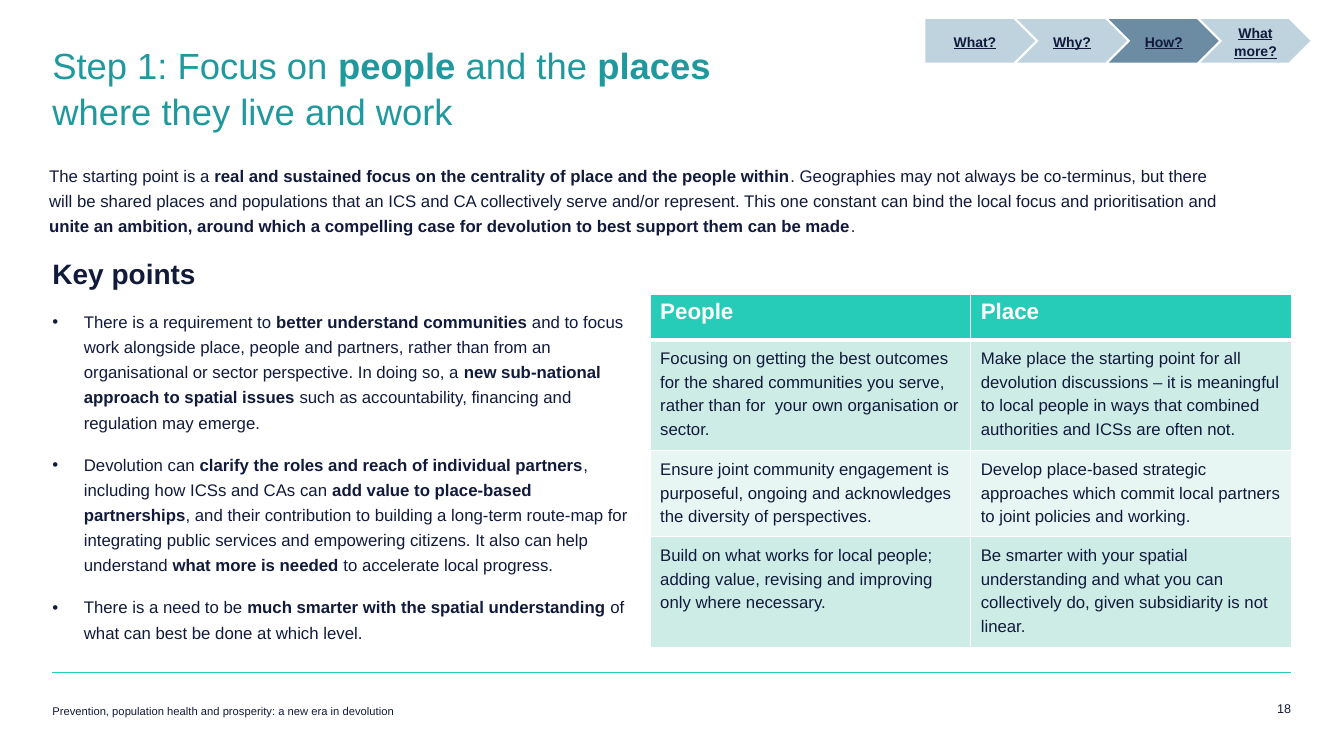
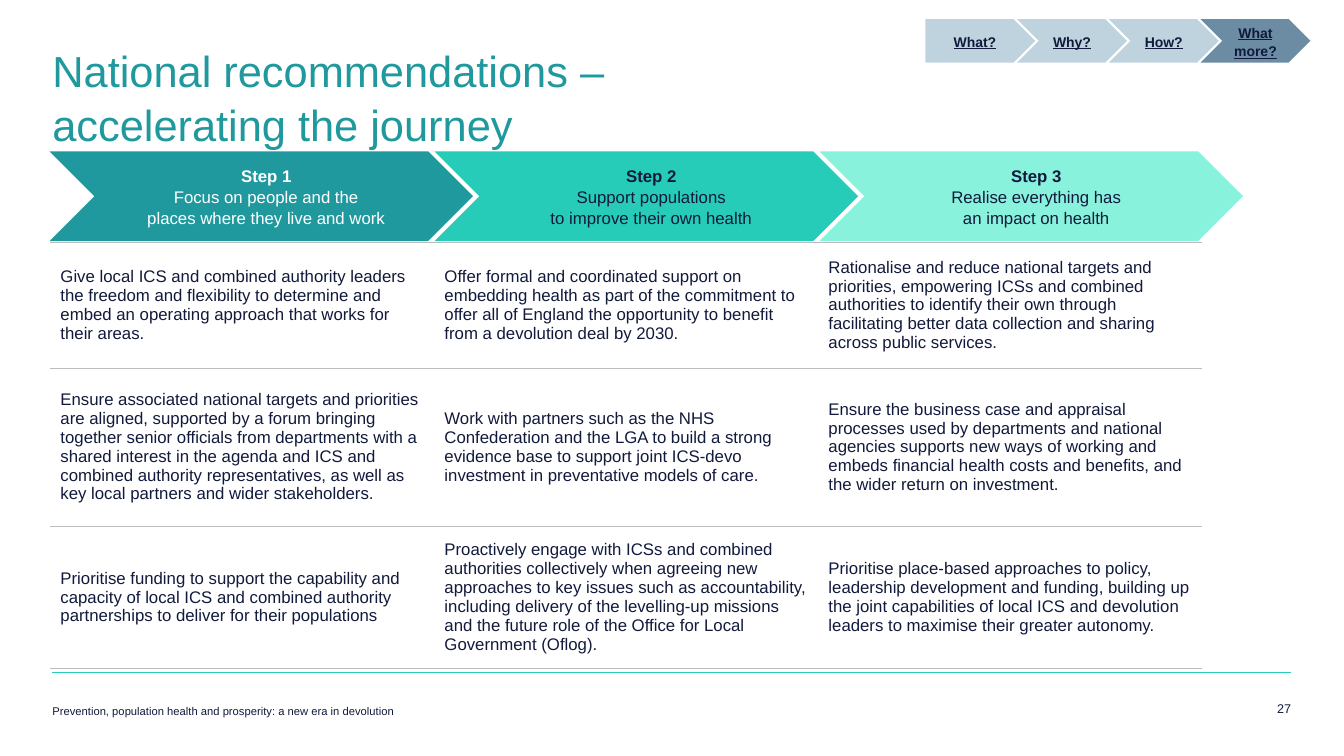
"""Build two slides on devolution: people and places, and national recommendations."""
from lxml.etree import SubElement
from pptx import Presentation
from pptx.dml.color import RGBColor
from pptx.enum.shapes import MSO_CONNECTOR, MSO_SHAPE
from pptx.enum.text import MSO_ANCHOR, MSO_AUTO_SIZE, PP_ALIGN
from pptx.oxml.ns import qn
from pptx.util import Pt

FONT = "Arial"
NAVY = RGBColor(0x12, 0x1A, 0x3C)
TEAL = RGBColor(0x1F, 0x99, 0x9E)
TURQUOISE = RGBColor(0x26, 0xCC, 0xB8)
MINT = RGBColor(0x88, 0xF2, 0xDD)
PALE_MINT = RGBColor(0xCD, 0xEC, 0xE6)
PALEST_MINT = RGBColor(0xE8, 0xF6, 0xF3)
PALE_BLUE = RGBColor(0xBF, 0xD3, 0xDE)
STEEL_BLUE = RGBColor(0x6B, 0x8C, 0xA3)
GREY = RGBColor(0xBB, 0xBC, 0xBC)
WHITE = RGBColor(0xFF, 0xFF, 0xFF)

LEFT, RIGHT = 37.4, 922.3
NO_STYLE_TABLE = "{2D5ABB26-0587-4C30-8999-92F81FD0307C}"


def write(frame, text, size=12, color=NAVY, bold=False, underline=False,
          align=PP_ALIGN.LEFT, spacing=1.0, after=0, bullet=None):
    """Add a paragraph to frame; text between ** marks is bold."""
    frame.word_wrap = True
    paragraph = frame.add_paragraph() if frame.text else frame.paragraphs[0]
    paragraph.alignment = align
    paragraph.line_spacing = spacing
    paragraph.space_before = Pt(0)
    paragraph.space_after = Pt(after)
    properties = paragraph._p.get_or_add_pPr()
    indent = Pt(22.5) if bullet else 0
    properties.set("marL", str(indent))
    properties.set("indent", str(-indent))
    if bullet:
        SubElement(properties, qn("a:buChar"), char=bullet)
    else:
        SubElement(properties, qn("a:buNone"))
    for index, part in enumerate(text.split("**")):
        if part:
            run = paragraph.add_run()
            run.text = part
            run.font.name = FONT
            run.font.size = Pt(size)
            run.font.color.rgb = color
            run.font.bold = bold or index % 2 == 1
            run.font.underline = underline


def draw_border(cell, edge, color, width):
    """Draw one edge (L, R, T or B) of a table cell."""
    line = SubElement(cell._tc.get_or_add_tcPr(), qn(f"a:ln{edge}"), w=str(Pt(width)))
    fill = SubElement(line, qn("a:solidFill"))
    SubElement(fill, qn("a:srgbClr"), val=str(color))


deck = Presentation()
deck.slide_width = Pt(960)
deck.slide_height = Pt(540)
people_slide = deck.slides.add_slide(deck.slide_layouts[1])
journey_slide = deck.slides.add_slide(deck.slide_layouts[5])

sections = ["What?", "Why?", "How?", "What more?"]
arrows = []
for slide, title, title_size, number, current in [
    (people_slide, "Step 1: Focus on **people** and the **places** where they live and work",
     26, "18", "How?"),
    (journey_slide, "National recommendations – accelerating the journey",
     31, "27", "What more?"),
]:
    heading = slide.shapes.title
    heading.left, heading.top, heading.width, heading.height = Pt(LEFT), Pt(29.5), Pt(525), Pt(81.4)
    footer = slide.shapes.add_textbox(Pt(LEFT), Pt(504), Pt(323), Pt(9.4))
    page = slide.shapes.add_textbox(Pt(RIGHT - 63.4), Pt(501), Pt(63.4), Pt(17.3))
    for part in (heading, footer, page):
        frame = part.text_frame
        frame.margin_left = frame.margin_right = frame.margin_top = frame.margin_bottom = 0
        frame.vertical_anchor = MSO_ANCHOR.TOP
        frame.auto_size = MSO_AUTO_SIZE.NONE
    write(heading.text_frame, title, size=title_size, color=TEAL, spacing=1.05)
    write(footer.text_frame, "Prevention, population health and prosperity: a new era in devolution",
          size=8, spacing=0.9)
    write(page.text_frame, number, size=9, align=PP_ALIGN.RIGHT)

    rule = slide.shapes.add_connector(MSO_CONNECTOR.STRAIGHT, Pt(LEFT), Pt(480.2), Pt(RIGHT), Pt(480.2))
    rule.line.color.rgb = TURQUOISE
    rule.line.width = Pt(0.75)
    SubElement(rule.element.spPr, qn("a:effectLst"))

    for index, section in enumerate(sections):
        outline = MSO_SHAPE.CHEVRON if index else MSO_SHAPE.PENTAGON
        fill = STEEL_BLUE if section == current else PALE_BLUE
        arrows.append((slide, outline, (661 + 65.5 * index, 13.7, 78.5, 31), fill, 7.2, [section],
                       dict(size=10, bold=True, underline=True, spacing=1.1)))

for index, (fill, color, lines) in enumerate([
    (TEAL, WHITE, ["**Step 1**", "Focus on people and the", "places where they live and work"]),
    (TURQUOISE, NAVY, ["**Step 2**", "Support populations", "to improve their own health"]),
    (MINT, NAVY, ["**Step 3**", "Realise everything has", "an impact on health"]),
]):
    arrows.append((journey_slide, MSO_SHAPE.CHEVRON, (35.5 + 275 * index, 108.2, 302.4, 64),
                   fill, 0, lines, dict(color=color, spacing=1.05)))

for slide, outline, box, fill, right_margin, lines, style in arrows:
    arrow = slide.shapes.add_shape(outline, *[Pt(length) for length in box])
    arrow.shadow.inherit = False
    arrow.fill.solid()
    arrow.fill.fore_color.rgb = fill
    arrow.line.fill.background()
    frame = arrow.text_frame
    frame.margin_left = frame.margin_top = frame.margin_bottom = Pt(7.2)
    frame.margin_right = Pt(right_margin)
    frame.vertical_anchor = MSO_ANCHOR.MIDDLE
    for line in lines:
        write(frame, line, align=PP_ALIGN.CENTER, **style)

introduction = people_slide.shapes.add_textbox(Pt(28), Pt(111), Pt(857), Pt(60))
write(introduction.text_frame,
      "The starting point is a **real and sustained focus on the centrality of place and the people "
      "within**. Geographies may not always be co-terminus, but there will be shared places and "
      "populations that an ICS and CA collectively serve and/or represent. This one constant can bind "
      "the local focus and prioritisation and **unite an ambition, around which a compelling case for "
      "devolution to best support them can be made**.", spacing=1.25)

key_points = people_slide.placeholders[1]
key_points.left, key_points.top, key_points.width, key_points.height = Pt(LEFT), Pt(177), Pt(436.5), Pt(268)
frame = key_points.text_frame
frame.margin_left = frame.margin_top = frame.margin_bottom = 0
frame.margin_right = Pt(22.5)
frame.auto_size = MSO_AUTO_SIZE.NONE
write(frame, "Key points", size=20, bold=True, spacing=1.25, after=12)
for point in [
    "There is a requirement to **better understand communities **and to focus work alongside place, "
    "people and partners, rather than from an organisational or sector perspective. In doing so, a "
    "**new sub-national approach to spatial issues **such as accountability, financing and regulation "
    "may emerge.",
    "Devolution can **clarify the roles and reach of individual partners**, including how ICSs and CAs "
    "can **add value to place-based partnerships**, and their contribution to building a long-term "
    "route-map for integrating public services and empowering citizens. It also can help understand "
    "**what more is needed **to accelerate local progress.",
    "There is a need to be **much smarter with the spatial understanding **of what can best be done at "
    "which level.",
]:
    write(frame, point, spacing=1.25, after=12, bullet="•")

people_and_place = [
    ["People", "Place"],
    ["Focusing on getting the best outcomes for the shared communities you serve, rather than for  "
     "your own organisation or sector.",
     "Make place the starting point for all devolution discussions – it is meaningful to local people "
     "in ways that combined authorities and ICSs are often not."],
    ["Ensure joint community engagement is purposeful, ongoing and acknowledges the diversity of "
     "perspectives.",
     "Develop place-based strategic approaches which commit local partners to joint policies and "
     "working."],
    ["Build on what works for local people; adding value, revising and improving only where necessary.",
     "Be smarter with your spatial understanding and what you can collectively do, given subsidiarity "
     "is not linear."],
]
recommendations = [
    ["Give local ICS and combined authority leaders the freedom and flexibility to determine and embed "
     "an operating approach that works for their areas.",
     "Offer formal and coordinated support on embedding health as part of the commitment to offer all "
     "of England the opportunity to benefit from a devolution deal by 2030.",
     "Rationalise and reduce national targets and priorities, empowering ICSs and combined authorities "
     "to identify their own through facilitating better data collection and sharing across public "
     "services."],
    ["Ensure associated national targets and priorities are aligned, supported by a forum bringing "
     "together senior officials from departments with a shared interest in the agenda and ICS and "
     "combined authority representatives, as well as key local partners and wider stakeholders.",
     "Work with partners such as the NHS Confederation and the LGA to build a strong evidence base to "
     "support joint ICS-devo investment in preventative models of care.",
     "Ensure the business case and appraisal processes used by departments and national agencies "
     "supports new ways of working and embeds financial health costs and benefits, and the wider "
     "return on investment."],
    ["Prioritise funding to support the capability and capacity of local ICS and combined authority "
     "partnerships to deliver for their populations",
     "Proactively engage with ICSs and combined authorities collectively when agreeing new approaches "
     "to key issues such as accountability, including delivery of the levelling-up missions and the "
     "future role of the Office for Local Government (Oflog).",
     "Prioritise place-based approaches to policy, leadership development and funding, building up the "
     "joint capabilities of local ICS and devolution leaders to maximise their greater autonomy."],
]

for slide, content, left, top, column_width, row_heights in [
    (people_slide, people_and_place, 464.4, 210.4, 229, [32.4, 78.5, 61.5, 79]),
    (journey_slide, recommendations, 36, 172.8, 274.3, [90, 113, 101.5]),
]:
    columns = len(content[0])
    grid = slide.shapes.add_table(len(content), columns, Pt(left), Pt(top),
                                  Pt(column_width * columns), Pt(sum(row_heights)))
    for style_id in grid.element.iter(qn("a:tableStyleId")):
        style_id.text = NO_STYLE_TABLE
    table = grid.table
    for column in table.columns:
        column.width = Pt(column_width)
    for index, (texts, height) in enumerate(zip(content, row_heights)):
        table.rows[index].height = Pt(height)
        for cell, text in zip(table.rows[index].cells, texts):
            if slide == journey_slide:
                for edge in "TB":
                    draw_border(cell, edge, GREY, 0.5)
                cell.fill.background()
                cell.vertical_anchor = MSO_ANCHOR.MIDDLE
                cell.margin_top = cell.margin_bottom = Pt(7.2)
                write(cell.text_frame, text)
                continue
            header = index == 0
            for edge in "LRTB":
                thick = (header and edge == "B") or (index == 1 and edge == "T")
                draw_border(cell, edge, WHITE, 3 if thick else 1)
            cell.fill.solid()
            cell.fill.fore_color.rgb = TURQUOISE if header else PALE_MINT if index % 2 else PALEST_MINT
            if header:
                write(cell.text_frame, text, size=16, color=WHITE, bold=True)
            else:
                write(cell.text_frame, text, spacing=1.25)

deck.save("out.pptx")
